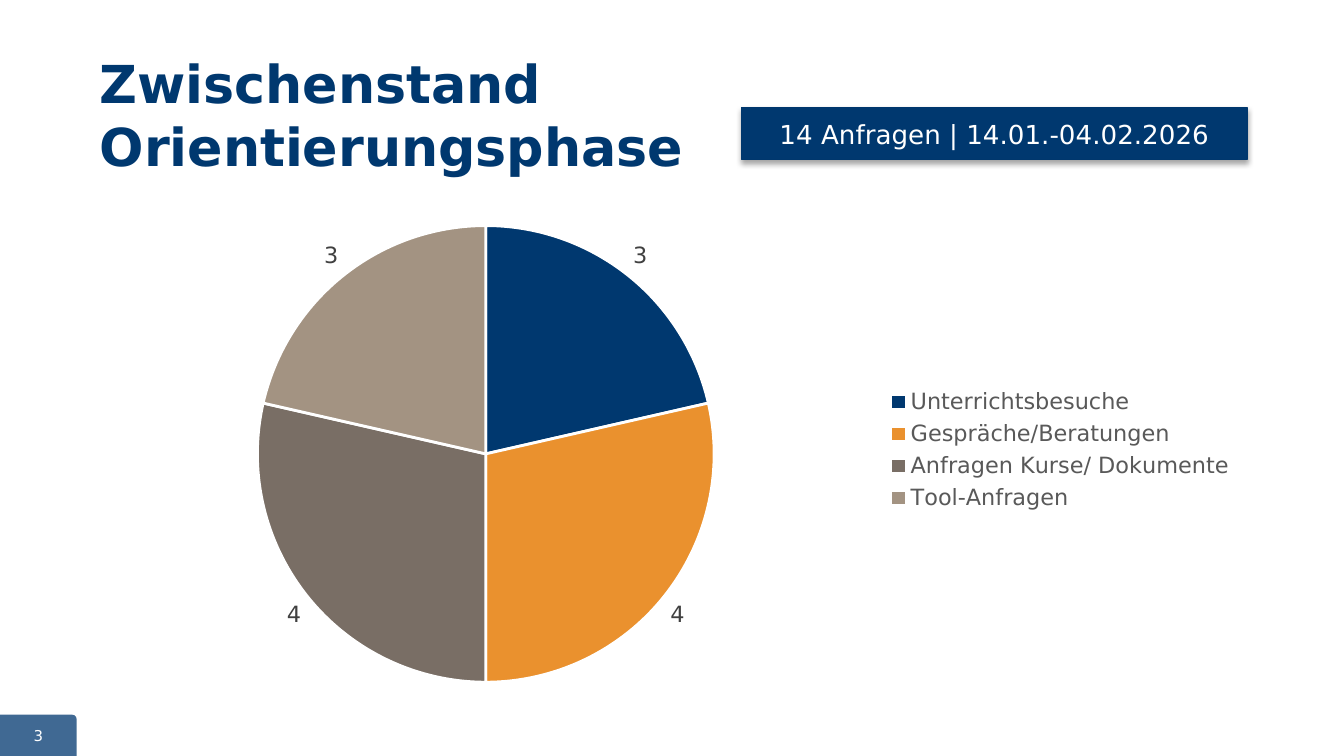
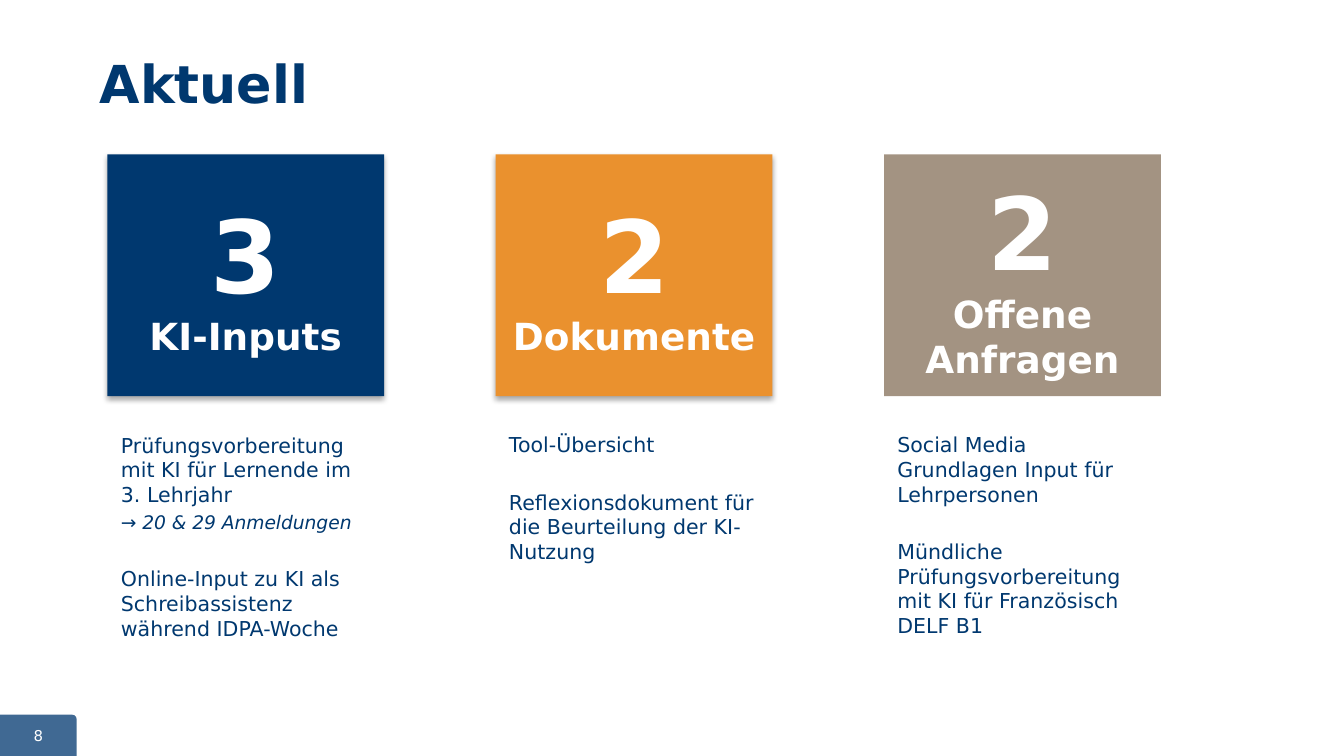
from lxml import etree
from pptx import Presentation
from pptx.chart.data import CategoryChartData
from pptx.dml.color import RGBColor
from pptx.enum.chart import XL_CHART_TYPE, XL_LABEL_POSITION, XL_LEGEND_POSITION
from pptx.enum.shapes import MSO_SHAPE
from pptx.enum.text import MSO_ANCHOR, MSO_AUTO_SIZE, PP_ALIGN
from pptx.oxml import parse_xml
from pptx.oxml.ns import nsdecls, qn
from pptx.util import Cm, Pt

PIE = XL_CHART_TYPE.PIE
OUTER = XL_LABEL_POSITION.OUTSIDE_END
RIGHT = XL_LEGEND_POSITION.RIGHT
RECT, TAB = MSO_SHAPE.RECTANGLE, MSO_SHAPE.ROUND_1_RECTANGLE
TOP, MIDDLE = MSO_ANCHOR.TOP, MSO_ANCHOR.MIDDLE
LEFT, CENTER = PP_ALIGN.LEFT, PP_ALIGN.CENTER
FIXED = MSO_AUTO_SIZE.NONE

FONT = "DejaVu Sans"
BLUE, ORANGE, BROWN, SAND = "00386F", "EA912E", "796E65", "A39382"
WHITE = "FFFFFF"

PHASE = {
    "title": "Zwischenstand Orientierungsphase",
    "page": "3",
    "banner": "14 Anfragen | 14.01.-04.02.2026",
    "parts": [
        ("Unterrichtsbesuche", 3, BLUE),
        ("Gespräche/Beratungen", 4, ORANGE),
        ("Anfragen Kurse/ Dokumente", 4, BROWN),
        ("Tool-Anfragen", 3, SAND),
    ],
}
NEWS = {
    "title": "Aktuell",
    "page": "8",
    "tiles": [
        ("3", "KI-Inputs", BLUE, True, [
            "Prüfungsvorbereitung mit KI für Lernende im 3. Lehrjahr",
            "→ 20 & 29 Anmeldungen",
            "Online-Input zu KI als Schreibassistenz während IDPA-Woche"]),
        ("2", "Dokumente", ORANGE, True, [
            "Tool-Übersicht",
            "Reflexionsdokument für die Beurteilung der KI-Nutzung"]),
        ("2", "Offene Anfragen", SAND, False, [
            "Social Media Grundlagen Input für Lehrpersonen",
            "Mündliche Prüfungsvorbereitung mit KI für Französisch DELF B1"]),
    ],
}


def color(code):
    return RGBColor.from_string(code)


def style(font, size, code, bold=False, italic=False):
    font.name, font.size = FONT, Pt(size)
    font.bold, font.italic = bold, italic
    font.color.rgb = color(code)


def place(shape, box):
    shape.left, shape.top, shape.width, shape.height = map(Cm, box)


def write(shape, lines, align=LEFT, anchor=TOP):
    frame = shape.text_frame
    frame.word_wrap, frame.auto_size = True, FIXED
    frame.vertical_anchor = anchor
    for pos, (text, look, gap) in enumerate(lines):
        par = frame.paragraphs[0] if pos == 0 else frame.add_paragraph()
        par.text, par.alignment = text, align
        par.space_before = Pt(gap)
        props = par._p.get_or_add_pPr()
        props.set("marL", "0")
        props.set("indent", "0")
        etree.SubElement(props, qn("a:buNone"))
        style(par.font, *look)


def draw(slide, kind, box, code, shade=False):
    shape = slide.shapes.add_shape(kind, *map(Cm, box))
    shape.fill.solid()
    shape.fill.fore_color.rgb = color(code)
    shape.line.fill.background()
    shape.shadow.inherit = False
    if shade:
        shape._element.spPr.find(qn("a:effectLst")).append(parse_xml(
            f'<a:outerShdw {nsdecls("a")} blurRad="{Pt(3.1)}" dist="{Pt(1.8)}" '
            'dir="5400000" rotWithShape="0"><a:srgbClr val="000000">'
            '<a:alpha val="35000"/></a:srgbClr></a:outerShdw>'))
    return shape


def start(deck, layout, data):
    slide = deck.slides.add_slide(deck.slide_layouts[layout])
    tab = draw(slide, TAB, (0, 13.51, 1.45, 0.78), BLUE)
    tab.adjustments[0] = 0.11
    tint = tab.fill._xPr.find(qn("a:solidFill"))[0]
    etree.SubElement(tint, qn("a:alpha")).set("val", "75000")
    title = slide.shapes.title
    place(title, (1.63, 0.84, 20.12, 2.18))
    write(title, [(data["title"], (28, BLUE, True), 0)])
    page = slide.shapes.add_textbox(*map(Cm, (0, 13.61, 1.45, 0.58)))
    write(page, [(data["page"], (8, WHITE), 0)], CENTER, MIDDLE)
    return slide


def fix(plot):
    area = plot._element.getparent()
    old = area.find(qn("c:layout"))
    if old is not None:
        area.remove(old)
    sizes = {"x": 0.147, "y": 0.056, "w": 0.394, "h": 0.904}
    modes = "".join(f'<c:{key}Mode val="edge"/>' for key in "xy")
    spots = "".join(f'<c:{key} val="{val}"/>' for key, val in sizes.items())
    area.insert(0, parse_xml(
        f'<c:layout {nsdecls("c")}><c:manualLayout><c:layoutTarget val="inner"/>'
        f'{modes}{spots}</c:manualLayout></c:layout>'))


def show_phase(deck):
    slide = start(deck, 5, PHASE)
    names, counts, codes = zip(*PHASE["parts"])
    data = CategoryChartData()
    data.categories = names
    data.add_series("Series 1", counts)
    box = map(Cm, (1.63, 3.73, 21.95, 9.55))
    chart = slide.shapes.add_chart(PIE, *box, data).chart
    style(chart.font, 10, "000000")
    chart.has_title = False
    chart.has_legend = True
    chart.legend.position = RIGHT
    chart.legend.include_in_layout = False
    style(chart.legend.font, 12, "595959")
    plot = chart.plots[0]
    plot.vary_by_categories = True
    fix(plot)
    series = plot.series[0]
    for pos, code in enumerate(codes):
        form = series.points[pos].format
        form.fill.solid()
        form.fill.fore_color.rgb = color(code)
        form.line.color.rgb = color(WHITE)
        form.line.width = Pt(1.5)
    labels = series.data_labels
    labels.show_value = True
    labels.show_percentage = False
    labels.position = OUTER
    style(labels.font, 12, "404040")
    banner = draw(slide, RECT, (14.02, 2.03, 9.55, 0.99), BLUE, True)
    banner.line.color.rgb = color("00376D")
    banner.line.width = Pt(0.75)
    write(banner, [(PHASE["banner"], (14, WHITE), 0)], CENTER, MIDDLE)


def show_news(deck):
    slide = start(deck, 1, NEWS)
    wide, step = 5.23, 7.34
    for pos, (count, name, code, shade, notes) in enumerate(NEWS["tiles"]):
        left = 2.03 + pos * step
        tile = draw(slide, RECT, (left, 2.92, wide, 4.57), code, shade)
        write(tile, [(count, (54, WHITE, True), 0),
                     (name, (20, WHITE, True), 0)], CENTER, MIDDLE)
        box = (left, 8.05, wide, 4.83)
        if pos == 0:
            body = slide.placeholders[1]
            place(body, box)
        else:
            body = slide.shapes.add_textbox(*map(Cm, box))
        lines = []
        for row, note in enumerate(notes):
            sub = note.startswith("→")
            look = (10, BLUE, False, True) if sub else (11, BLUE)
            gap = 0 if row == 0 else 2.5 if sub else 17.5
            lines.append((note, look, gap))
        write(body, lines)


def main():
    deck = Presentation()
    deck.slide_width, deck.slide_height = Cm(25.4), Cm(14.29)
    show_phase(deck)
    show_news(deck)
    deck.save("out.pptx")


if __name__ == "__main__":
    main()
